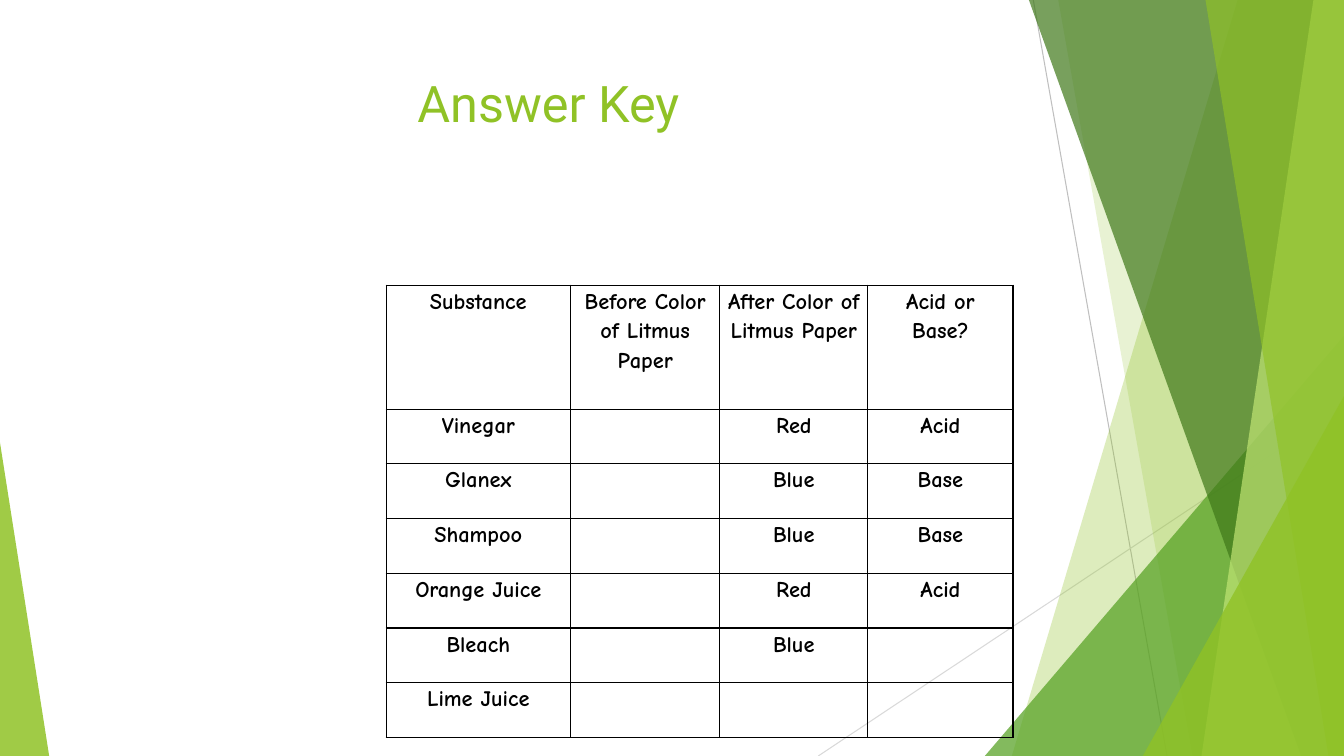
from lxml.etree import SubElement
from pptx import Presentation
from pptx.dml.color import RGBColor
from pptx.enum.shapes import MSO_CONNECTOR, MSO_SHAPE
from pptx.enum.text import MSO_ANCHOR, PP_ALIGN
from pptx.oxml.ns import qn
from pptx.util import Cm, Pt

WIDTH, HEIGHT = 33.87, 19.05
GREEN = "90C226"


def color(value):
    return RGBColor.from_string(value)


def format_text(text_frame, font_name, size, value, bold):
    """Center the first paragraph and style its runs."""
    paragraph = text_frame.paragraphs[0]
    paragraph.alignment = PP_ALIGN.CENTER
    for run in paragraph.runs:
        run.font.name = font_name
        run.font.size = Pt(size)
        run.font.bold = bold
        run.font.color.rgb = color(value)


presentation = Presentation()
presentation.slide_width, presentation.slide_height = Cm(WIDTH), Cm(HEIGHT)
slide = presentation.slides.add_slide(presentation.slide_layouts[5])
shapes = slide.shapes

# Thin lines behind the facets
for x1, y1, x2, y2, line_color in [
    (26.04, 0, 29.41, HEIGHT, "BFBFBF"),
    (WIDTH, 10.24, 20.62, HEIGHT, "D9D9D9"),
]:
    line = shapes.add_connector(MSO_CONNECTOR.STRAIGHT, Cm(x1), Cm(y1), Cm(x2), Cm(y2))
    line.line.color.rgb = color(line_color)
    line.line.width = Pt(0.75)
    SubElement(line.element.spPr, qn("a:effectLst"))

# Bands run from (top x, bottom x) to the right edge;
# triangles take (left, top, width, apex) and stand on the bottom edge
facets = [
    ((31.19, 25.5), GREEN, 30),
    ((26.67, 30.05), GREEN, 20),
    ((24.82, 8.46, 9.05, 1), "54A021", 72),
    ((25.93, 32.79), "3F7819", 70),
    ((33.1, 30.28), "C0E474", 70),
    ((30.38, 33.48), GREEN, 65),
    ((28.8, 9.98, 5.07, 1), GREEN, 80),
    ((0, 11.15, 1.24, 0), GREEN, 85),
]
for geometry, fill_color, opacity in facets:
    if len(geometry) == 2:
        top_x, bottom_x = geometry
        builder = shapes.build_freeform(Cm(top_x), 0)
        builder.add_line_segments(
            [(Cm(WIDTH), 0), (Cm(WIDTH), Cm(HEIGHT)), (Cm(bottom_x), Cm(HEIGHT))]
        )
        facet = builder.convert_to_shape()
    else:
        left, top, width, apex = geometry
        facet = shapes.add_shape(
            MSO_SHAPE.ISOSCELES_TRIANGLE, Cm(left), Cm(top), Cm(width), Cm(HEIGHT - top)
        )
        facet.adjustments[0] = apex
    facet.shadow.inherit = False
    facet.line.fill.background()
    facet.fill.solid()
    facet.fill.fore_color.rgb = color(fill_color)
    fill_element = facet.element.spPr.find(qn("a:solidFill")).find(qn("a:srgbClr"))
    SubElement(fill_element, qn("a:alpha"), val=str(opacity * 1000))

title = shapes.title
title.left, title.top, title.width, title.height = Cm(1.88), Cm(1.7), Cm(23.88), Cm(3.66)
title.text_frame.text = "Answer Key"
title.text_frame.vertical_anchor = MSO_ANCHOR.TOP
format_text(title.text_frame, "Roboto", 36, GREEN, False)

answers = [
    ("Substance", "Before Color of Litmus Paper", "After Color of Litmus Paper", "Acid or Base?"),
    ("Vinegar", "", "Red", "Acid"),
    ("Glanex", "", "Blue", "Base"),
    ("Shampoo", "", "Blue", "Base"),
    ("Orange Juice", "", "Red", "Acid"),
    ("Bleach", "", "Blue", ""),
    ("Lime Juice", "", "", ""),
]
column_widths = [4.65, 3.76, 3.73, 3.66]
row_heights = [3.12] + [1.38] * 6
table = shapes.add_table(
    len(answers), len(column_widths), Cm(9.73), Cm(7.19),
    Cm(sum(column_widths)), Cm(sum(row_heights)),
).table
table.first_row = table.horz_banding = False
for column, width in zip(table.columns, column_widths):
    column.width = Cm(width)
for row, height, texts in zip(table.rows, row_heights, answers):
    row.height = Cm(height)
    for cell, text in zip(row.cells, texts):
        cell.margin_left = cell.margin_right = Cm(0.18)
        cell.margin_top = cell.margin_bottom = 0
        cell.text_frame.text = text
        cell.text_frame.paragraphs[0].line_spacing = 1.15
        format_text(cell.text_frame, "Comic Neue", 16, "000000", True)
        properties = cell._tc.get_or_add_tcPr()
        for side in ("L", "R", "T", "B"):
            border = SubElement(properties, qn(f"a:ln{side}"), w=str(Pt(1)))
            SubElement(SubElement(border, qn("a:solidFill")), qn("a:srgbClr"), val="000000")
        cell.fill.background()

presentation.save("out.pptx")
